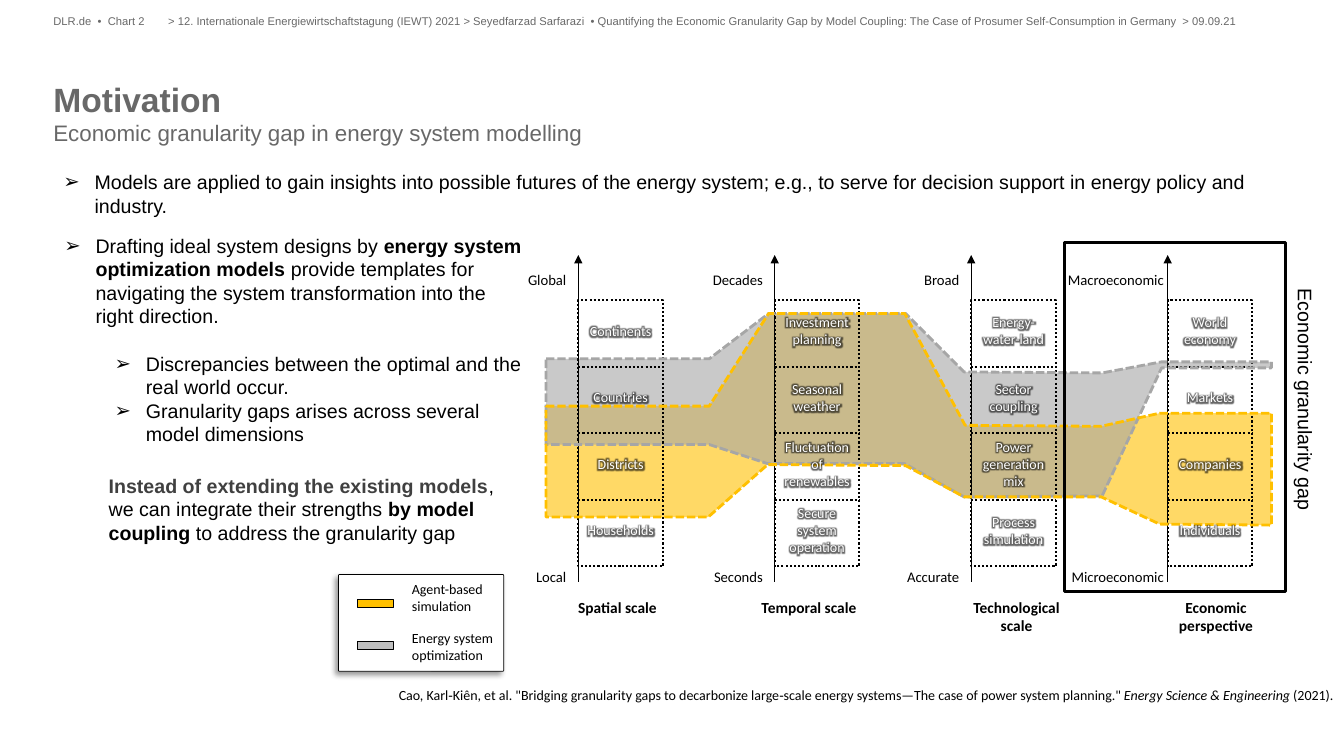
from lxml import etree
from pptx import Presentation
from pptx.dml.color import RGBColor
from pptx.enum.dml import MSO_LINE
from pptx.enum.shapes import MSO_CONNECTOR, MSO_SHAPE
from pptx.enum.text import MSO_ANCHOR, PP_ALIGN
from pptx.oxml import parse_xml
from pptx.oxml.ns import nsdecls, qn
from pptx.util import Inches, Pt

BLACK = RGBColor(0, 0, 0)
WHITE = RGBColor(255, 255, 255)
GREY = RGBColor(0x68, 0x68, 0x68)
DARK = RGBColor(0x40, 0x40, 0x40)
YELLOW = RGBColor(0xFF, 0xC0, 0x00)
BAND_GREY = RGBColor(0xA6, 0xA6, 0xA6)
KEY_GREY = RGBColor(0xBF, 0xBF, 0xBF)

HEADER = {"name": "Arial", "size": Pt(8), "color": GREY}
BODY = {"name": "Arial", "size": Pt(14), "color": BLACK}
LABEL = {"name": "Calibri", "size": Pt(10.5), "color": BLACK}
CAPTION = {"name": "Calibri", "size": Pt(11), "color": BLACK, "bold": True}
SMALL = {"name": "Calibri", "size": Pt(10), "color": BLACK}
CELL = {**SMALL, "color": WHITE}

PITCH, CELL_W, CELL_H = 1.95, 0.84, 0.66
SCALES = [
    ("Global", "Local", "Spatial scale", 0.39, 0,
     ["Continents", "Countries", "Districts", "Households"]),
    ("Decades", "Seconds", "Temporal scale", 0.34, 0,
     ["Investment planning", "Seasonal weather", "Fluctuation of renewables",
      "Secure system operation"]),
    ("Broad", "Accurate", "Technological scale", 0.45, 0,
     ["Energy-water-land", "Sector coupling", "Power generation mix",
      "Process simulation"]),
    ("Macroeconomic", "Microeconomic", "Economic perspective", 0.48, 0.08,
     ["World economy", "Markets", "Companies", "Individuals"]),
]
AGENT_BAND = [
    (0, 1.5), (1.62, 1.5), (2.21, 0.58), (3.56, 0.58), (4.16, 1.69), (5.51, 1.7),
    (6.09, 1.57), (7.2, 1.57), (7.2, 2.68), (6.09, 2.67), (5.51, 2.4),
    (4.15, 2.4), (3.57, 2.09), (2.2, 2.08), (1.61, 2.6), (0, 2.6)]
OPTIMIZATION_BAND = [
    (0, 1.03), (1.62, 1.03), (2.21, 0.58), (3.57, 0.58), (4.15, 1.16), (5.52, 1.17),
    (6.11, 1.06), (7.2, 1.06), (7.2, 1.12), (6.11, 1.12), (5.52, 2.39),
    (4.15, 2.4), (3.56, 2.07), (2.2, 2.07), (1.62, 1.88), (0, 1.88)]


def add_runs(p, runs, style):
    """Fill a paragraph with (text, overrides) runs."""
    for text, extra in runs:
        r = p.add_run()
        r.text = text
        for key, value in {**style, **extra}.items():
            if key == "color":
                r.font.color.rgb = value
            else:
                setattr(r.font, key, value)


def add_text(s, x, y, w, h, paragraphs, style, inset=True, **settings):
    """Add a wrapped text box and return it."""
    sp = s.shapes.add_textbox(Inches(x), Inches(y), Inches(w), Inches(h))
    tf = sp.text_frame
    tf.word_wrap = True
    tf.vertical_anchor = settings.pop("anchor", MSO_ANCHOR.TOP)
    if not inset:
        tf.margin_left = tf.margin_right = tf.margin_top = tf.margin_bottom = 0
    for i, runs in enumerate(paragraphs):
        p = tf.paragraphs[0] if i == 0 else tf.add_paragraph()
        for key, value in settings.items():
            setattr(p, key, value)
        add_runs(p, [(runs, {})] if isinstance(runs, str) else runs, style)
    return sp


def add_bullet(p, left):
    """Give a paragraph an arrow bullet with a hanging indent."""
    pPr = p._p.get_or_add_pPr()
    pPr.set("marL", str(Inches(left)))
    pPr.set("indent", str(-Inches(0.31)))
    etree.SubElement(pPr, qn("a:buFont"), typeface="Arial")
    etree.SubElement(pPr, qn("a:buChar"), char="➢")


def add_box(s, x, y, w, h, line_width, fill=None, kind=MSO_SHAPE.RECTANGLE):
    """Add a black-edged box."""
    sp = s.shapes.add_shape(kind, Inches(x), Inches(y), Inches(w), Inches(h))
    sp.shadow.inherit = False
    if fill is None:
        sp.fill.background()
    else:
        sp.fill.solid()
        sp.fill.fore_color.rgb = fill
    sp.line.color.rgb = BLACK
    sp.line.width = Pt(line_width)
    return sp


def add_line(s, x1, y1, x2, y2, width):
    """Add a straight black line."""
    c = s.shapes.add_connector(MSO_CONNECTOR.STRAIGHT, Inches(x1), Inches(y1),
                               Inches(x2), Inches(y2))
    c.line.color.rgb = BLACK
    c.line.width = Pt(width)
    etree.SubElement(c._element.spPr, qn("a:effectLst"))
    return c


def add_band(s, x, y, points, color, filled):
    """Draw a band either as a translucent area or as a dashed outline."""
    pts = [(Inches(x + dx), Inches(y + dy)) for dx, dy in points]
    fb = s.shapes.build_freeform(*pts[0])
    fb.add_line_segments(pts[1:], close=True)
    sp = fb.convert_to_shape()
    sp.shadow.inherit = False
    if filled:
        sp.fill.solid()
        sp.fill.fore_color.rgb = color
        clr = sp._element.spPr.find(".//" + qn("a:srgbClr"))
        etree.SubElement(clr, qn("a:alpha"), val="60000")
        sp.line.fill.background()
    else:
        sp.fill.background()
        sp.line.color.rgb = color
        sp.line.width = Pt(2)
        sp.line.dash_style = MSO_LINE.SQUARE_DOT
        sp.line._ln.find(qn("a:prstDash")).set("val", "sysDash")


def add_glow(sp):
    """Put a dark glow behind the text of a shape."""
    for rPr in sp._element.iter(qn("a:rPr")):
        rPr.find(qn("a:solidFill")).addnext(parse_xml(
            f'<a:effectLst {nsdecls("a")}><a:glow rad="63500"><a:srgbClr val="000000">'
            '<a:alpha val="60000"/></a:srgbClr></a:glow></a:effectLst>'))


def scale_column(s, x, y, scale):
    """Draw one scale: axis, end labels, caption and dotted cells."""
    top, bottom, caption, caption_dx, shift, _ = scale
    axis = add_line(s, x, y + 3.24, x, y, 0.75)
    etree.SubElement(axis.line._ln, qn("a:tailEnd"), type="triangle")
    for text, dy in ((top, 0.11), (bottom, 3.05)):
        add_text(s, x - 1.32 + shift, y + dy, 1.3, 0.28, [text], LABEL,
                 alignment=PP_ALIGN.RIGHT)
    add_text(s, x + caption_dx - 0.65, y + 3.35, 1.3, 0.47, [caption], CAPTION,
             alignment=PP_ALIGN.CENTER)
    frame = add_box(s, x, y + 0.45, CELL_W, 4 * CELL_H, 1.5)
    dividers = [add_line(s, x, y + 0.45 + i * CELL_H, x + CELL_W,
                         y + 0.45 + i * CELL_H, 1.5) for i in (1, 2, 3)]
    for sp in [frame, *dividers]:
        sp.line.dash_style = MSO_LINE.ROUND_DOT


def diagram(s, x, y):
    """Draw the four scales with both model bands and the gap frame."""
    bands = ((AGENT_BAND, YELLOW), (OPTIMIZATION_BAND, BAND_GREY))
    for points, color in bands:
        add_band(s, x, y, points, color, True)
    for i, scale in enumerate(SCALES):
        scale_column(s, x + 0.32 + i * PITCH, y, scale)
    for points, color in reversed(bands):
        add_band(s, x, y, points, color, False)
    for i, scale in enumerate(SCALES):
        for j, text in enumerate(scale[-1]):
            add_glow(add_text(s, x + 0.27 + i * PITCH, y + 0.42 + j * CELL_H, 0.94,
                              CELL_H, [text], CELL, anchor=MSO_ANCHOR.MIDDLE,
                              alignment=PP_ALIGN.CENTER))
    add_box(s, x + 5.15, y - 0.12, 2.19, 3.46, 2.25)
    add_text(s, x + 6.3, y + 1.3, 2.47, 0.34, ["Economic granularity gap"],
             BODY).rotation = 90


def legend(s, x, y, w, h):
    """Draw the shadowed legend panel with its two keys."""
    panel = add_box(s, x, y, w, h, 0.5, WHITE, MSO_SHAPE.ROUNDED_RECTANGLE)
    panel.adjustments[0] = 0.01
    panel._element.spPr.find(qn("a:effectLst")).append(parse_xml(
        f'<a:outerShdw {nsdecls("a")} blurRad="50800" dist="38100" dir="8100000">'
        '<a:srgbClr val="000000"><a:alpha val="40000"/></a:srgbClr></a:outerShdw>'))
    for text, color, dy in (("Agent-based simulation", YELLOW, 0.01),
                            ("Energy system optimization", KEY_GREY, 0.5)):
        add_text(s, x + 0.63, y + dy, 1.25, 0.44, [text], SMALL)
        add_box(s, x + 0.19, y + 0.24 + dy * 0.85, 0.35, 0.08, 0.25, color)


def heading(s, x, y):
    """Write the running header and the two-line title."""
    add_text(s, x, y, 1.14, 0.16, ["DLR.de  •  Chart 2"], HEADER, inset=False)
    add_text(s, x + 1.14, y, 11.13, 0.16, [
        "> 12. Internationale Energiewirtschaftstagung (IEWT) 2021 > Seyedfarzad Sarfarazi  "
        "• Quantifying the Economic Granularity Gap by Model Coupling: The Case of Prosumer "
        "Self-Consumption in Germany  > 09.09.21"], HEADER, inset=False)
    add_text(s, x, y + 0.64, 8.94, 0.7, [
        [("Motivation", {"size": Pt(24), "bold": True})],
        [("Economic granularity gap in energy system modelling", {"size": Pt(16)})]],
        HEADER, inset=False)


def argument(s, x, y):
    """Write the bulleted argument and its conclusion."""
    bold = {"bold": True}
    intro = add_text(s, x, y, 12.09, 0.57, [
        "Models are applied to gain insights into possible futures of the energy system; "
        "e.g., to serve for decision support in energy policy and industry."], BODY)
    points = add_text(s, x + 0.01, y + 0.63, 4.79, 2.46, [
        [("Drafting ideal system designs by ", {}),
         ("energy system optimization models ", bold),
         ("provide templates for navigating the system transformation into the right "
          "direction.", {})],
        "Discrepancies between the optimal and the real world occur.",
        "Granularity gaps arises across several model dimensions"], BODY)
    points.text_frame.paragraphs[1].space_before = Pt(17)
    paragraphs = [*intro.text_frame.paragraphs, *points.text_frame.paragraphs]
    for p, left in zip(paragraphs, (0.31, 0.31, 0.81, 0.81)):
        add_bullet(p, left)
    add_text(s, x + 0.45, y + 3.01, 4.08, 0.81, [
        [("Instead of extending the existing models", {**bold, "color": DARK}),
         (", we can integrate their strengths ", {}), ("by model coupling", bold),
         (" to address the granularity gap", {})]], BODY)


def citation(s, x, y, w):
    """Write the source line."""
    add_text(s, x, y, w, 0.27, [
        [("Cao, Karl‐Kiên, et al. \"Bridging granularity gaps to decarbonize large‐scale "
          "energy systems—The case of power system planning.\" ", {}),
         ("Energy Science & Engineering", {"italic": True}), (" (2021).", {})]], SMALL)


def main():
    """Build the slide and save it."""
    prs = Presentation()
    prs.slide_width, prs.slide_height = Inches(13.34), Inches(7.5)
    s = prs.slides.add_slide(prs.slide_layouts[6])
    heading(s, 0.53, 0.14)
    diagram(s, 5.42, 2.53)
    legend(s, 3.36, 5.7, 1.64, 0.96)
    citation(s, 3.86, 6.76, 10.38)
    argument(s, 0.53, 1.64)
    prs.save("out.pptx")


if __name__ == "__main__":
    main()
